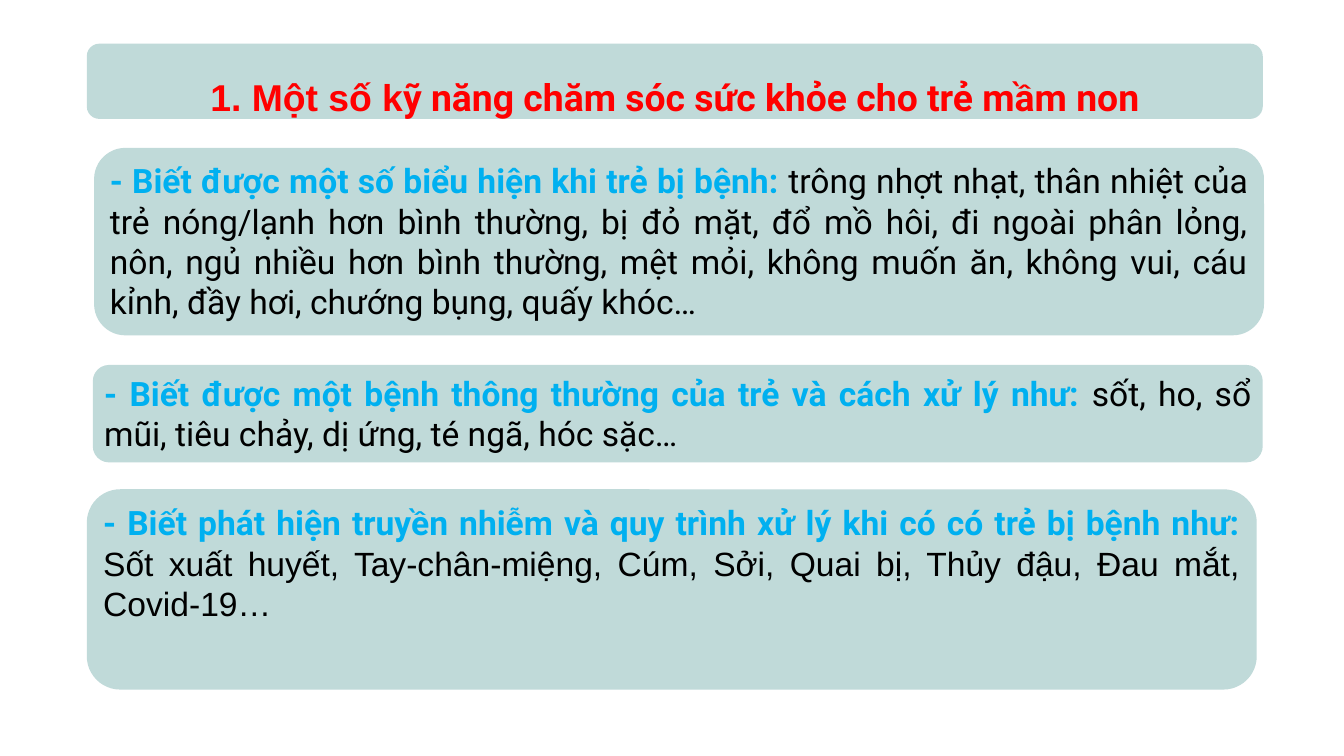
from dataclasses import dataclass

from pptx import Presentation
from pptx.dml.color import RGBColor
from pptx.enum import shapes, text
from pptx.util import Pt


@dataclass(frozen=True)
class Theme:
    panel: str = "C0DAD9"
    title: str = "FF0000"
    lead: str = "00B0F0"
    body: str = "000000"
    head_size: int = 40
    body_size: int = 36
    main: str = "Roboto"
    alt: str = "Arial"


class Deck:
    def __init__(self, theme):
        self.theme = theme
        self.prs = Presentation()
        self.prs.slide_width, self.prs.slide_height = Pt(1440), Pt(810)
        self.slide = self.prs.slides.add_slide(self.prs.slide_layouts[5])

    def panel(self, left, top, width, height):
        box = self.slide.shapes.add_shape(
            shapes.MSO_SHAPE.ROUNDED_RECTANGLE,
            Pt(left), Pt(top), Pt(width), Pt(height))
        box.shadow.inherit = False
        box.fill.solid()
        box.fill.fore_color.rgb = RGBColor.from_string(self.theme.panel)
        box.line.fill.background()
        return box

    def run(self, para, words, font, color, bold):
        run = para.add_run()
        run.text = words
        run.font.name = font
        run.font.bold = bold
        run.font.color.rgb = RGBColor.from_string(color)

    def title(self, left, top, width, height, parts):
        self.panel(left, top, width, height)
        head = self.slide.shapes.title
        head.left, head.top = Pt(left), Pt(top + 4)
        head.width, head.height = Pt(width), Pt(height)
        tree = self.slide.shapes._spTree
        tree.append(head._element)
        frame = head.text_frame
        frame.word_wrap = True
        frame.auto_size = text.MSO_AUTO_SIZE.NONE
        frame.vertical_anchor = text.MSO_ANCHOR.MIDDLE
        para = frame.paragraphs[0]
        para.alignment = text.PP_ALIGN.CENTER
        para.line_spacing = Pt(72.8)
        para.font.size = Pt(self.theme.head_size)
        for words, font in parts:
            self.run(para, words, font, self.theme.title, True)

    def note(self, left, top, height, lead, body, font):
        frame = self.panel(left, top, 1253.5, height).text_frame
        frame.word_wrap = True
        frame.vertical_anchor = text.MSO_ANCHOR.TOP
        para = frame.paragraphs[0]
        para.alignment = text.PP_ALIGN.JUSTIFY
        para.space_before = para.space_after = Pt(6)
        para.font.size = Pt(self.theme.body_size)
        self.run(para, lead, self.theme.main, self.theme.lead, True)
        self.run(para, body, font, self.theme.body, False)


def main():
    theme = Theme()
    deck = Deck(theme)
    deck.title(93, 46.8, 1260, 80.6, [
        ("1. Một số k", theme.alt),
        ("ỹ năng chăm sóc sức khỏe cho trẻ mầm non", theme.main),
    ])
    notes = [
        (100.8, 158.4, 200.9,
         "- Biết được một số biểu hiện khi trẻ bị bệnh: ",
         "trông nhợt nhạt, thân nhiệt của trẻ nóng/lạnh hơn bình thường, "
         "bị đỏ mặt, đổ mồ hôi, đi ngoài phân lỏng, nôn, ngủ nhiều hơn "
         "bình thường, mệt mỏi, không muốn ăn, không vui, cáu kỉnh, "
         "đầy hơi, chướng bụng, quấy khóc…", theme.main),
        (99.4, 391, 104.4,
         "- Biết được một bệnh thông thường của trẻ và cách xử lý như: ",
         "sốt, ho, sổ mũi, tiêu chảy, dị ứng, té ngã, hóc sặc…",
         theme.main),
        (93, 524.2, 214.6,
         "- Biết phát hiện truyền nhiễm và quy trình xử lý khi có có trẻ "
         "bị bệnh như: ",
         "Sốt xuất huyết, Tay-chân-miệng, Cúm, Sởi, Quai bị, Thủy đậu, "
         "Đau mắt, Covid-19…", theme.alt),
    ]
    for note in notes:
        deck.note(*note)
    deck.prs.save("out.pptx")


if __name__ == "__main__":
    main()
